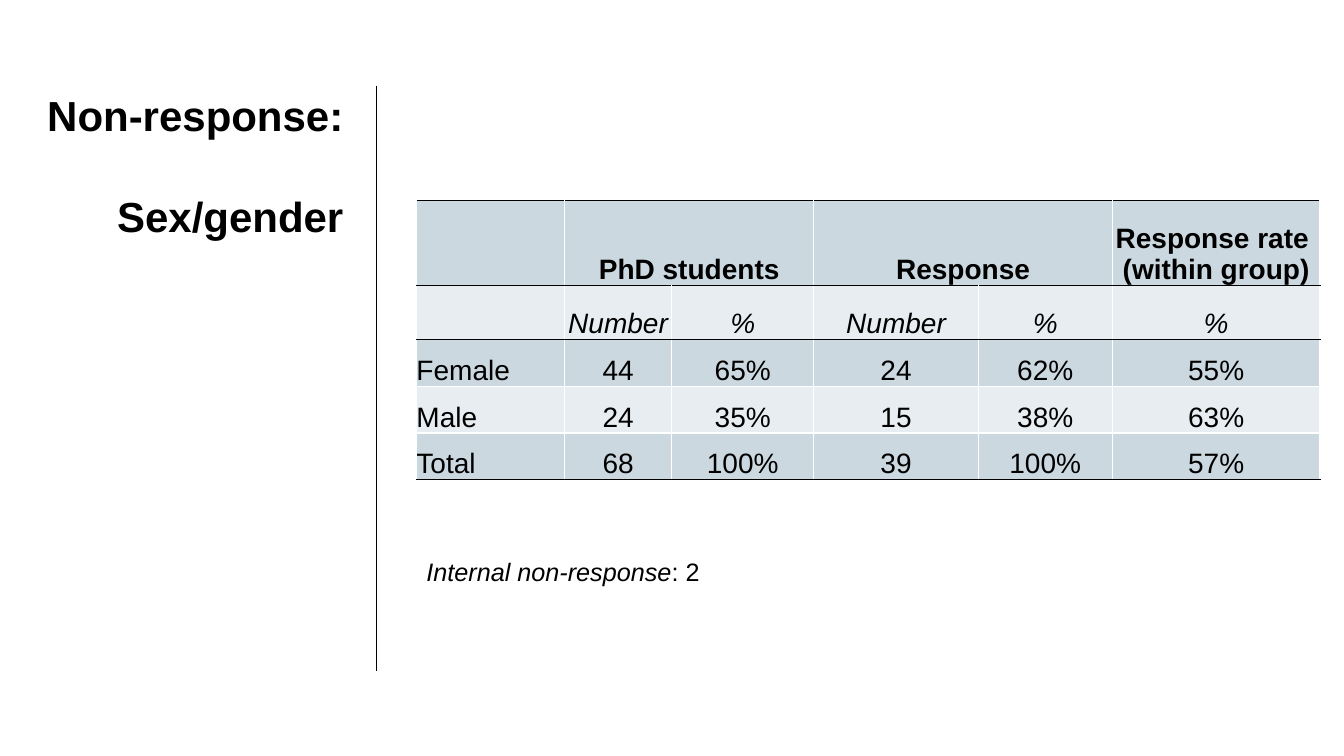
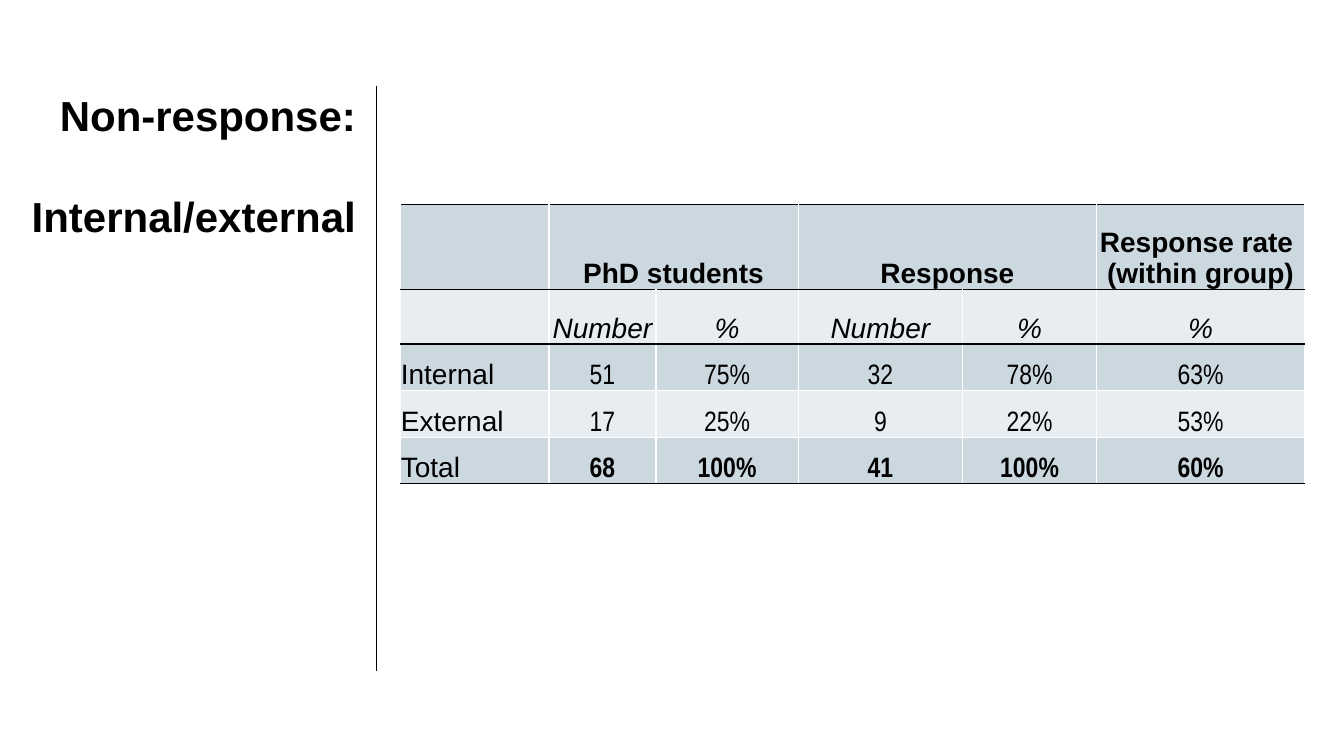
from lxml import etree
from pptx import Presentation
from pptx.dml.color import RGBColor
from pptx.enum import shapes, text
from pptx.oxml import ns
from pptx.util import Pt

# Shared look
BLACK = RGBColor(0x00, 0x00, 0x00)
WHITE = RGBColor(0xFF, 0xFF, 0xFF)
BAND_DARK = RGBColor(0xCC, 0xD8, 0xE0)
BAND_LIGHT = RGBColor(0xE7, 0xED, 0xF0)
FONT = "Arial"
NARROW = "Arial Narrow"
LEFT, CENTER, RIGHT = text.PP_ALIGN.LEFT, text.PP_ALIGN.CENTER, text.PP_ALIGN.RIGHT

# Table grid and heading rows
COLUMN_WIDTHS = [105.8, 76.5, 101.6, 117.4, 95.8, 148.4]
ROW_HEIGHTS = [60.5, 39, 33.3, 33.3, 33.3]
RULES = [BLACK, BLACK, BLACK, WHITE, WHITE, BLACK]
GROUP_HEADS = ["", "PhD students", "", "Response", "", "Response rate \n(within group)"]
UNIT_HEADS = ["", "Number", "%", "Number", "%", "%"]

GENDER_ROWS = [
    ["Female", "44", "65%", "24", "62%", "55%"],
    ["Male", "24", "35%", "15", "38%", "63%"],
    ["Total", "68", "100%", "39", "100%", "57%"],
]
AFFILIATION_ROWS = [
    ["Internal", "51", "75%", "32", "78%", "63%"],
    ["External", "17", "25%", "9", "22%", "53%"],
    ["Total", "68", "100%", "41", "100%", "60%"],
]


def add_run(paragraph, words, size, bold=False, italic=False, font=FONT):
    run = paragraph.add_run()
    run.text = words
    run.font.size = Pt(size)
    run.font.name = font
    run.font.bold = bold
    run.font.italic = italic
    run.font.color.rgb = BLACK


def add_text_frame(slide, left, top, width, height):
    frame = slide.shapes.add_textbox(Pt(left), Pt(top), Pt(width), Pt(height)).text_frame
    frame.word_wrap = True
    return frame


def add_title(slide, left, width, topic):
    frame = add_text_frame(slide, left, 60.5, width, 124.5)
    heading = frame.paragraphs[0]
    subject = frame.add_paragraph()
    subject.space_before = Pt(36)
    for paragraph, words in ((heading, "Non-response:"), (subject, topic)):
        paragraph.alignment = RIGHT
        paragraph.line_spacing = Pt(36)
        add_run(paragraph, words, 30, bold=True)


def add_divider(slide):
    divider = slide.shapes.add_connector(
        shapes.MSO_CONNECTOR.STRAIGHT, Pt(268.8), Pt(61.2), Pt(268.8), Pt(479))
    divider.line.color.rgb = BLACK
    divider.line.width = Pt(0.5)
    etree.SubElement(divider._element.spPr, ns.qn("a:effectLst"))


def set_borders(cell, above, below):
    properties = cell._tc.get_or_add_tcPr()
    sides = (("L", WHITE), ("R", WHITE), ("T", above), ("B", below))
    for position, (side, color) in enumerate(sides):
        border = etree.Element(ns.qn(f"a:ln{side}"), w=str(Pt(1)))
        fill = etree.SubElement(border, ns.qn("a:solidFill"))
        etree.SubElement(fill, ns.qn("a:srgbClr"), val=str(color))
        properties.insert(position, border)


def fill_cell(cell, words, alignment, **style):
    cell.margin_left = cell.margin_right = cell.margin_top = cell.margin_bottom = 0
    cell.vertical_anchor = text.MSO_ANCHOR.BOTTOM
    frame = cell.text_frame
    for index, line in enumerate(words.split("\n") if words else []):
        paragraph = frame.add_paragraph() if index else frame.paragraphs[0]
        paragraph.alignment = alignment
        add_run(paragraph, line, 20, **style)


def add_response_table(slide, left, top, groups, number_font=FONT, bold_total=False):
    rows = [GROUP_HEADS, UNIT_HEADS] + groups
    table = slide.shapes.add_table(
        len(rows), len(COLUMN_WIDTHS), Pt(left), Pt(top),
        Pt(sum(COLUMN_WIDTHS)), Pt(sum(ROW_HEIGHTS))).table
    table.first_row = table.horz_banding = False
    for column, width in zip(table.columns, COLUMN_WIDTHS):
        column.width = Pt(width)
    for row, height in zip(table.rows, ROW_HEIGHTS):
        row.height = Pt(height)

    for r, row in enumerate(rows):
        for c, words in enumerate(row):
            cell = table.cell(r, c)
            is_number = r > 1 and c > 0
            is_total = r == len(rows) - 1
            fill_cell(cell, words, CENTER if c else LEFT,
                      bold=r == 0 or (bold_total and is_total and is_number),
                      italic=r == 1,
                      font=number_font if is_number else FONT)
            cell.fill.solid()
            cell.fill.fore_color.rgb = BAND_LIGHT if r % 2 else BAND_DARK
            set_borders(cell, RULES[r], RULES[r + 1])

    # Group headings cover a number and a percentage column
    for c in (1, 3):
        table.cell(0, c).merge(table.cell(0, c + 1))


def add_footnote(slide):
    note = add_text_frame(slide, 297.5, 394, 218, 29).paragraphs[0]
    add_run(note, "Internal non-response", 18, italic=True)
    add_run(note, ": 2", 18)


def add_slide(deck):
    slide = deck.slides.add_slide(deck.slide_layouts[6])
    add_divider(slide)
    return slide


def main():
    deck = Presentation()
    deck.slide_width, deck.slide_height = Pt(960), Pt(540)

    # Sex/gender
    gender = add_slide(deck)
    add_title(gender, 16.5, 236, "Sex/gender")
    add_response_table(gender, 297.5, 143.3, GENDER_ROWS)
    add_footnote(gender)

    # Internal/external
    affiliation = add_slide(deck)
    add_title(affiliation, 11.5, 250, "Internal/external")
    add_response_table(affiliation, 286.3, 146.2, AFFILIATION_ROWS,
                       number_font=NARROW, bold_total=True)

    deck.save("out.pptx")


if __name__ == "__main__":
    main()
